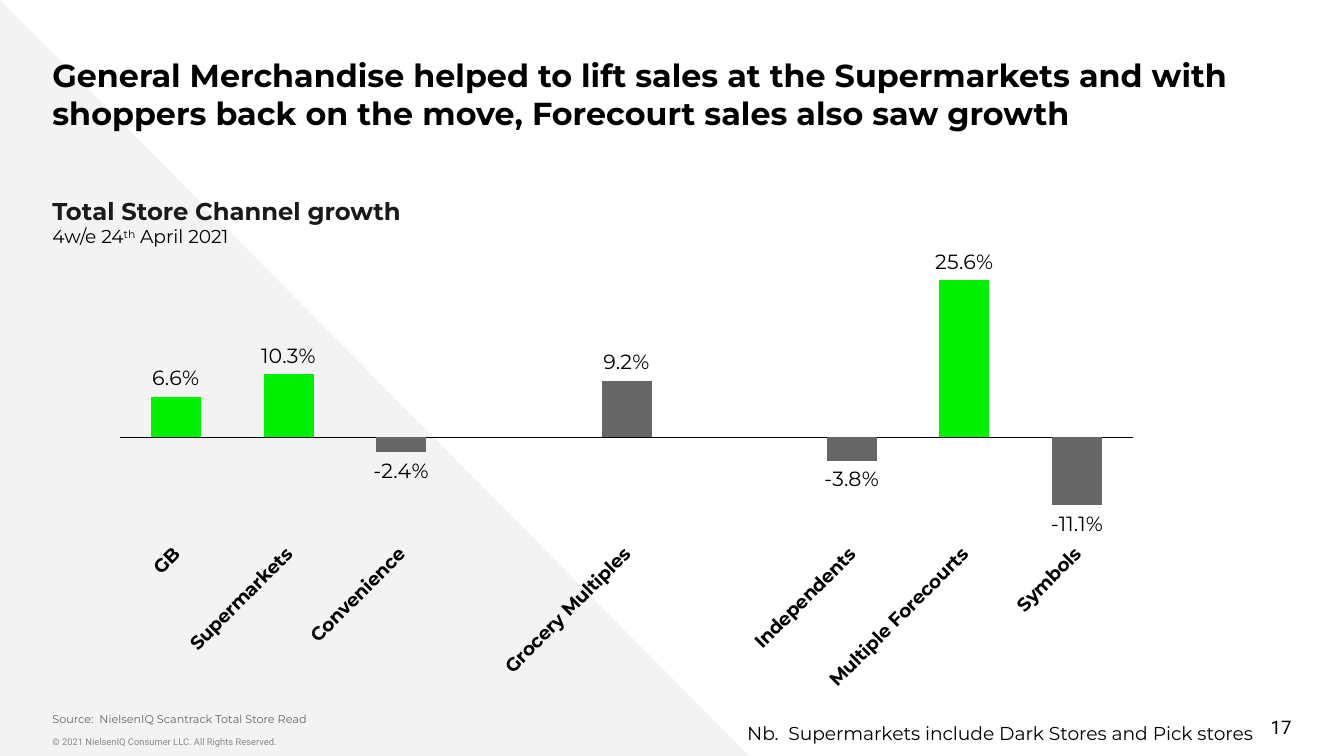
from dataclasses import dataclass
from typing import Any

from lxml import etree
from pptx import Presentation
from pptx.chart.data import CategoryChartData
from pptx.dml.color import RGBColor
from pptx.enum.chart import XL_CHART_TYPE, XL_LABEL_POSITION, XL_TICK_LABEL_POSITION, XL_TICK_MARK
from pptx.enum.shapes import MSO_SHAPE
from pptx.enum.text import MSO_ANCHOR, MSO_AUTO_SIZE, PP_ALIGN
from pptx.oxml.ns import qn
from pptx.util import Inches, Pt

COLUMN = XL_CHART_TYPE.COLUMN_CLUSTERED
OUTSIDE_END = XL_LABEL_POSITION.OUTSIDE_END
LABELS_LOW = XL_TICK_LABEL_POSITION.LOW
NO_TICK = XL_TICK_MARK.NONE
RIGHT_TRIANGLE = MSO_SHAPE.RIGHT_TRIANGLE
TOP, MIDDLE, BOTTOM = MSO_ANCHOR.TOP, MSO_ANCHOR.MIDDLE, MSO_ANCHOR.BOTTOM
LEFT, RIGHT = PP_ALIGN.LEFT, PP_ALIGN.RIGHT
FIXED_SIZE, GROW_WITH_TEXT = MSO_AUTO_SIZE.NONE, MSO_AUTO_SIZE.SHAPE_TO_FIT_TEXT

BLACK = RGBColor(0x00, 0x00, 0x00)
INK = RGBColor(0x1A, 0x1A, 0x1A)
GREY = RGBColor(0x66, 0x66, 0x66)
MID_GREY = RGBColor(0x88, 0x88, 0x88)
PALE_GREY = RGBColor(0xF3, 0xF3, 0xF3)
GREEN = RGBColor(0x00, 0xF0, 0x00)

SLIDE_WIDTH = Inches(10)
SLIDE_HEIGHT = SLIDE_WIDTH * 9 // 16
BRAND_FONT, FOOTER_FONT = "Montserrat", "Roboto"
MARGIN = 3.9


@dataclass(frozen=True)
class Frame:
    """A place on the slide, in percent of its width and height."""
    left: float
    top: float
    width: float
    height: float

    def lengths(self) -> tuple[int, int, int, int]:
        return (int(SLIDE_WIDTH * self.left / 100), int(SLIDE_HEIGHT * self.top / 100),
                int(SLIDE_WIDTH * self.width / 100), int(SLIDE_HEIGHT * self.height / 100))


@dataclass(frozen=True)
class Span:
    text: str
    size: float
    color: RGBColor = BLACK
    bold: bool = False
    font: str = BRAND_FONT
    raised: bool = False


@dataclass(frozen=True)
class TextBlock:
    """One paragraph, given as lines of spans."""
    frame: Frame
    lines: list[list[Span]]
    inset: tuple[float, float] = (0, 0.05)
    anchor: Any = TOP
    align: Any = LEFT
    wrap: bool = True
    space_after: float = 0


@dataclass(frozen=True)
class Channel:
    name: str
    growth: float | None = None
    highlighted: bool = False


TRIANGLE_FRAME = Frame(0, 0, 55.9, 100.27)
CHART_FRAME = Frame(8.2, 29.51, 78.5, 62.58)
PLOT_PERCENT = {"x": 0.9, "y": 6.3, "w": 96.1, "h": 58.5}

TEXT_BLOCKS = [
    TextBlock(Frame(MARGIN, 96.53, 55.4, 3.56),
              [[Span("© 2021 NielsenIQ Consumer LLC. All Rights Reserved.", 5, MID_GREY,
                     font=FOOTER_FONT)]]),
    TextBlock(Frame(73.6, 93.51, 22.5, 5.33), [[Span("17", 10, font=FOOTER_FONT)]],
              anchor=MIDDLE, align=RIGHT),
    TextBlock(Frame(MARGIN, 25.07, 41.6, 8.71),
              [[Span("Total Store Channel growth", 13, INK, bold=True)],
               [Span("4w/e 24", 10), Span("th", 10, raised=True), Span(" April 2021", 10)]],
              space_after=12),
    TextBlock(Frame(MARGIN, 5.6, 95.4, 7.82),
              [[Span("General Merchandise helped to lift sales at the Supermarkets and with "
                     "shoppers back on the move, Forecourt sales also saw growth", 17, bold=True)]],
              inset=(0, 0.1)),
    TextBlock(Frame(MARGIN, 94.22, 89.2, 3.56),
              [[Span("Source:  NielsenIQ Scantrack Total Store Read", 6, GREY)]],
              inset=(0, 0.1), anchor=BOTTOM),
    TextBlock(Frame(53.6, 94.6, 40.6, 4.8),
              [[Span("Nb.  Supermarkets include Dark Stores and Pick stores", 10)]],
              inset=(0.1, 0.05), align=RIGHT, wrap=False),
]

CHANNELS = [
    Channel("GB", 0.066, True),
    Channel("Supermarkets", 0.103, True),
    Channel("Convenience", -0.024),
    Channel(" "),
    Channel("Grocery Multiples", 0.092),
    Channel(""),
    Channel("Independents", -0.038),
    Channel("Multiple Forecourts", 0.256, True),
    Channel("Symbols", -0.111),
]


def set_all(target: Any, values: dict[str, Any]) -> None:
    for name, value in values.items():
        setattr(target, name, value)


def style_font(font: Any, size: float, color: RGBColor, bold: bool, name: str) -> None:
    set_all(font, {"size": Pt(size), "bold": bold, "name": name})
    font.color.rgb = color


def paint(fill: Any, color: RGBColor) -> None:
    fill.solid()
    fill.fore_color.rgb = color


def draw_backdrop(slide: Any) -> None:
    triangle = slide.shapes.add_shape(RIGHT_TRIANGLE, *TRIANGLE_FRAME.lengths())
    triangle.shadow.inherit = False
    paint(triangle.fill, PALE_GREY)
    triangle.line.fill.background()


def break_line(paragraph: Any, size: float) -> None:
    """Add a line break of the given text size, so that it does not stretch its line."""
    paragraph.add_line_break()
    line_break = paragraph._p.findall(qn("a:br"))[-1]
    etree.SubElement(line_break, qn("a:rPr")).set("sz", str(int(size * 100)))


def draw_text(slide: Any, block: TextBlock) -> None:
    frame = slide.shapes.add_textbox(*block.frame.lengths()).text_frame
    side, end = (Inches(inset) for inset in block.inset)
    set_all(frame, {
        "margin_left": side, "margin_right": side, "margin_top": end, "margin_bottom": end,
        "vertical_anchor": block.anchor, "word_wrap": block.wrap,
        "auto_size": FIXED_SIZE if block.wrap else GROW_WITH_TEXT,
    })
    paragraph = frame.paragraphs[0]
    set_all(paragraph, {"alignment": block.align, "space_after": Pt(block.space_after)})
    for index, line in enumerate(block.lines):
        if index:
            break_line(paragraph, line[0].size)
        for span in line:
            run = paragraph.add_run()
            run.text = span.text
            style_font(run.font, span.size, span.color, span.bold, span.font)
            if span.raised:
                run.font._element.set("baseline", "30000")


def place_plot(chart: Any) -> None:
    """Fix the inner plot area at its shares of the chart."""
    plot_area = chart._chartSpace.chart.plotArea
    for old_layout in plot_area.findall(qn("c:layout")):
        plot_area.remove(old_layout)
    layout = etree.Element(qn("c:layout"))
    manual = etree.SubElement(layout, qn("c:manualLayout"))
    shares = {side: round(percent / 100, 3) for side, percent in PLOT_PERCENT.items()}
    settings = {"layoutTarget": "inner", "xMode": "edge", "yMode": "edge", **shares}
    for tag, value in settings.items():
        etree.SubElement(manual, qn(f"c:{tag}")).set("val", str(value))
    plot_area.insert(0, layout)


def draw_growth_chart(slide: Any, channels: list[Channel]) -> None:
    growth = CategoryChartData(number_format="0.0%")
    growth.categories = [channel.name for channel in channels]
    growth.add_series("Series 1", [channel.growth for channel in channels])
    chart = slide.shapes.add_chart(COLUMN, *CHART_FRAME.lengths(), growth).chart
    set_all(chart, {"has_legend": False, "has_title": False})
    style_font(chart.font, 10, BLACK, False, "Arial")
    place_plot(chart)

    set_all(chart.value_axis, {"minimum_scale": -0.15, "maximum_scale": 0.3,
                               "has_major_gridlines": False, "visible": False})
    channel_axis = chart.category_axis
    set_all(channel_axis, {"tick_label_position": LABELS_LOW, "major_tick_mark": NO_TICK,
                           "minor_tick_mark": NO_TICK, "has_major_gridlines": False})
    channel_axis.format.line.color.rgb = BLACK
    channel_axis.format.line.width = Pt(0.75)
    style_font(channel_axis.tick_labels.font, 10, BLACK, True, BRAND_FONT)
    label_body = channel_axis._element.find(f"{qn('c:txPr')}/{qn('a:bodyPr')}")
    label_body.set("rot", str(-45 * 60000))

    set_all(chart.plots[0], {"gap_width": 125, "vary_by_categories": False})
    bars = chart.plots[0].series[0]
    bars.invert_if_negative = False
    paint(bars.format.fill, GREY)
    for index, channel in enumerate(channels):
        if channel.highlighted:
            paint(bars.points[index].format.fill, GREEN)
    set_all(bars.data_labels, {"show_value": True, "position": OUTSIDE_END,
                               "number_format": "0.0%", "number_format_is_linked": False})
    style_font(bars.data_labels.font, 11, BLACK, False, BRAND_FONT)


def main() -> None:
    deck = Presentation()
    set_all(deck, {"slide_width": SLIDE_WIDTH, "slide_height": SLIDE_HEIGHT})
    slide = deck.slides.add_slide(deck.slide_layouts[6])
    draw_backdrop(slide)
    draw_growth_chart(slide, CHANNELS)
    for block in TEXT_BLOCKS:
        draw_text(slide, block)
    deck.save("out.pptx")


if __name__ == "__main__":
    main()
